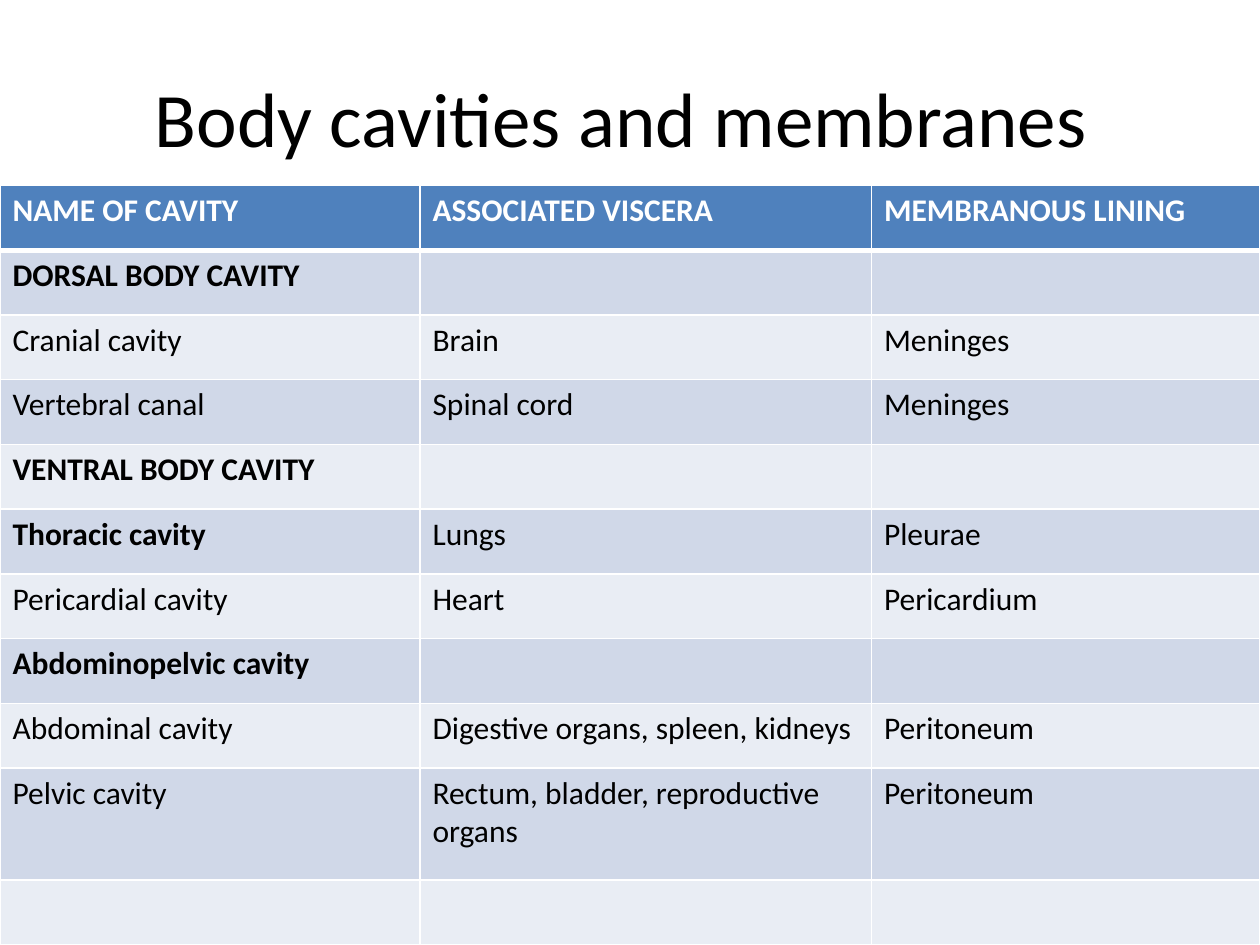
from lxml import etree
from pptx import Presentation
from pptx.dml.color import RGBColor
from pptx.enum.text import MSO_ANCHOR, PP_ALIGN
from pptx.oxml.ns import qn
from pptx.util import Pt

CENTER = PP_ALIGN.CENTER
MIDDLE = MSO_ANCHOR.MIDDLE
TITLE_ONLY = 5

COLUMN_WIDTHS = [240, 258, 222]
ROW_HEIGHT = 37
TALL_ROW_HEIGHT = 64
CAVITIES = [
    ("NAME OF CAVITY", "ASSOCIATED VISCERA", "MEMBRANOUS LINING"),
    ("DORSAL BODY CAVITY", "", ""),
    ("Cranial cavity", "Brain", "Meninges"),
    ("Vertebral canal", "Spinal cord", "Meninges"),
    ("VENTRAL BODY CAVITY", "", ""),
    ("Thoracic cavity", "Lungs", "Pleurae"),
    ("Pericardial cavity", "Heart", "Pericardium"),
    ("Abdominopelvic cavity", "", ""),
    ("Abdominal cavity", "Digestive organs, spleen, kidneys", "Peritoneum"),
    ("Pelvic cavity", "Rectum, bladder, reproductive organs", "Peritoneum"),
    ("", "", ""),
]
GROUPS = {"DORSAL BODY CAVITY", "VENTRAL BODY CAVITY", "Thoracic cavity",
          "Abdominopelvic cavity"}


def rgb(hex_color):
    return RGBColor.from_string(hex_color)


class SlideBuilder:
    """Holds the style and the current slide."""

    font_name = "Calibri"
    ink = "000000"
    paper = "FFFFFF"
    header = "4F81BD"
    bands = ("E9EDF4", "D0D8E8")

    def __init__(self, slide):
        self.slide = slide

    def format(self, paragraph, size, color, bold=False):
        font = paragraph.font
        font.name = self.font_name
        font.size = Pt(size)
        font.bold = bold
        font.color.rgb = rgb(color)

    def title(self, text, left, top, width, height):
        title = self.slide.shapes.title
        title.left, title.top = Pt(left), Pt(top)
        title.width, title.height = Pt(width), Pt(height)
        title.text_frame.text = text
        title.text_frame.vertical_anchor = MIDDLE
        heading = title.text_frame.paragraphs[0]
        heading.alignment = CENTER
        self.format(heading, 44, self.ink)

    def border(self, cell, side, width):
        properties = cell._tc.get_or_add_tcPr()
        line = etree.SubElement(properties, qn(f"a:ln{side}"), w=str(Pt(width)))
        fill = etree.SubElement(line, qn("a:solidFill"))
        etree.SubElement(fill, qn("a:srgbClr"), val=self.paper)

    def cell(self, cell, text, row):
        is_header = row == 0
        widths = {"L": 1, "R": 1, "T": 3 if row == 1 else 1, "B": 3 if is_header else 1}
        for side, width in widths.items():
            self.border(cell, side, width)
        cell.fill.solid()
        cell.fill.fore_color.rgb = rgb(self.header if is_header else self.bands[row % 2])
        cell.text = text
        self.format(cell.text_frame.paragraphs[0], 18,
                    self.paper if is_header else self.ink,
                    is_header or text in GROUPS)

    def table(self, rows, left, top, column_widths, row_heights):
        table = self.slide.shapes.add_table(
            len(rows), len(column_widths), Pt(left), Pt(top),
            Pt(sum(column_widths)), Pt(sum(row_heights))).table
        for column, width in zip(table.columns, column_widths):
            column.width = Pt(width)
        for row, (texts, height) in enumerate(zip(rows, row_heights)):
            table.rows[row].height = Pt(height)
            for column, text in enumerate(texts):
                self.cell(table.cell(row, column), text, row)


def main():
    presentation = Presentation()
    presentation.slide_width, presentation.slide_height = Pt(720), Pt(540)
    layout = presentation.slide_layouts[TITLE_ONLY]
    builder = SlideBuilder(presentation.slides.add_slide(layout))
    builder.title("Body cavities and membranes ", 36, 21.6, 648, 90)
    row_heights = [TALL_ROW_HEIGHT if row[0] == "Pelvic cavity" else ROW_HEIGHT
                   for row in CAVITIES]
    builder.table(CAVITIES, 0, 106, COLUMN_WIDTHS, row_heights)
    presentation.save("out.pptx")


if __name__ == "__main__":
    main()
